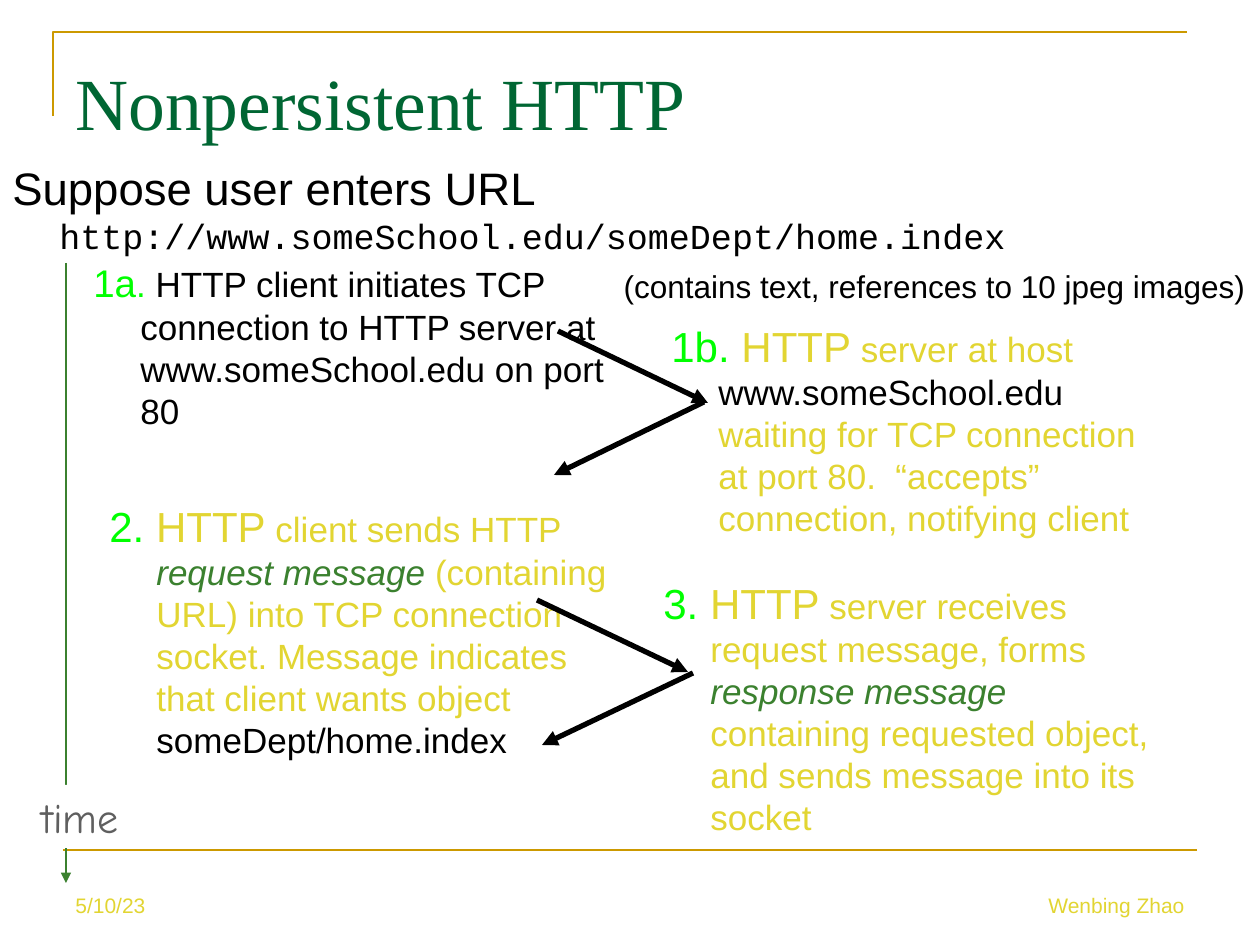
"""Build the slide that steps through a nonpersistent HTTP exchange."""
import pptx
import pptx.dml.color
import pptx.enum.shapes
import pptx.enum.text
import pptx.oxml.ns
import pptx.util
from lxml import etree

RGB = pptx.dml.color.RGBColor
GOLD = RGB(0xCC, 0x99, 0x00)
PINE = RGB(0x00, 0x66, 0x33)
LEAF = RGB(0x3B, 0x81, 0x2F)
LIME = RGB(0x00, 0xFF, 0x00)
SUN = RGB(0xE2, 0xD5, 0x32)
GRAY = RGB(0x5F, 0x5F, 0x5F)
BLACK = RGB(0x00, 0x00, 0x00)
WHITE = RGB(0xFF, 0xFF, 0xFF)

ALIGN = pptx.enum.text.PP_ALIGN
ANCHOR = pptx.enum.text.MSO_ANCHOR
SCALE = 914400 / 126
SIZE = (1260, 945)
HANG = 47

FRAME = [(53, 116), (53, 32), (1187, 32)]
RULE = ((63, 850), (1197, 850))
AXIS = ((66, 263), (66, 883))
ARROWS = [
    ((558, 331), (708, 403)),
    ((537, 600), (688, 672)),
    ((693, 673), (542, 745)),
    ((704, 402), (554, 475)),
]

LABELS = [
    ((63, 861, 294, 63), ("5/10/23", 12, SUN), ALIGN.LEFT, ANCHOR.BOTTOM),
    ((903, 861, 294, 63), ("Wenbing Zhao", 12, SUN), ALIGN.RIGHT, ANCHOR.BOTTOM),
    ((63, 38, 1134, 126), ("Nonpersistent HTTP", 42, PINE, "Times New Roman"),
     ALIGN.LEFT, ANCHOR.MIDDLE),
    ((609, 261, 651, 64),
     ("(contains text, references to 10 jpeg images)", 18, BLACK),
     ALIGN.CENTER, ANCHOR.TOP),
]
TIME = ((24, 785, 112, 63), ("time", 24, GRAY, "Comic Neue"))

STEPS = [
    ((0, 154, 1149, 64), [
        ("Suppose user enters URL ", 26, BLACK),
        ("http://www.someSchool.edu/someDept/home.index", 20, BLACK, "Courier New"),
    ]),
    ((81, 253, 576, 256), [
        ("1a", 22, LIME),
        (".", 20, LIME),
        (" HTTP client initiates TCP connection to HTTP server at "
         "www.someSchool.edu on port 80", 20, BLACK),
    ]),
    ((97, 494, 525, 149), [
        ("2.", 24, LIME),
        (" HTTP", 24, SUN),
        (" client sends HTTP ", 20, SUN),
        ("request message", 20, LEAF, "Arial", True),
        (" (containing URL) into TCP connection socket. "
         "Message indicates that client wants object ", 20, SUN),
        ("someDept/home.index", 20, BLACK),
    ]),
    ((659, 314, 525, 208), [
        ("1b.", 24, LIME),
        (" HTTP", 24, SUN),
        (" server at host ", 20, SUN),
        ("www.someSchool.edu", 20, BLACK),
        (" waiting for TCP connection at port 80.  “accepts” "
         "connection, notifying client", 20, SUN),
    ]),
    ((651, 571, 525, 248), [
        ("3.", 24, LIME),
        (" HTTP", 24, SUN),
        (" server receives request message, forms ", 20, SUN),
        ("response message", 20, LEAF, "Arial", True),
        (" containing requested object, and sends message into its socket", 20, SUN),
    ]),
]


def px(num):
    return pptx.util.Emu(round(num * SCALE))


def sub(node, tag, **attrs):
    return etree.SubElement(node, pptx.oxml.ns.qn(tag), attrs)


def add_run(par, text, size, color, name="Arial", italic=False):
    run = par.add_run()
    run.text = text
    look = {"size": pptx.util.Pt(size), "name": name, "italic": italic}
    for key, value in look.items():
        setattr(run.font, key, value)
    run.font.color.rgb = color


def add_text(shapes, box, runs, align=ALIGN.LEFT, anchor=ANCHOR.TOP):
    frame = shapes.add_textbox(*map(px, box)).text_frame
    look = {"word_wrap": True, "vertical_anchor": anchor}
    for key, value in look.items():
        setattr(frame, key, value)
    par = frame.paragraphs[0]
    par.alignment = align
    for run in runs:
        add_run(par, *run)
    return par


def add_step(shapes, box, runs):
    props = add_text(shapes, box, runs)._p.get_or_add_pPr()
    props.set("marL", str(px(HANG)))
    props.set("indent", str(px(-HANG)))
    sub(sub(props, "a:spcBef"), "a:spcPct", val="20000")


def add_line(shapes, ends, color, width, arrow=True):
    start, end = ends
    kind = pptx.enum.shapes.MSO_CONNECTOR.STRAIGHT
    link = shapes.add_connector(kind, *map(px, start + end))
    link.line.color.rgb = color
    link.line.width = pptx.util.Pt(width)
    if arrow:
        sub(link.line._get_or_add_ln(), "a:tailEnd", type="triangle")
    sub(link._element.spPr, "a:effectLst")


def add_frame(shapes):
    pen = shapes.build_freeform(*FRAME[0], scale=SCALE)
    pen.add_line_segments(FRAME[1:], close=False)
    shape = pen.convert_to_shape()
    shape.shadow.inherit = False
    shape.fill.background()
    shape.line.color.rgb = GOLD
    shape.line.width = pptx.util.Pt(1.5)


def add_time(shapes, box, run):
    kind = pptx.enum.shapes.MSO_SHAPE.RECTANGLE
    shape = shapes.add_shape(kind, *map(px, box))
    shape.shadow.inherit = False
    shape.fill.solid()
    shape.fill.fore_color.rgb = WHITE
    shape.line.fill.background()
    frame = shape.text_frame
    look = {"word_wrap": False, "vertical_anchor": ANCHOR.TOP}
    for key, value in look.items():
        setattr(frame, key, value)
    par = frame.paragraphs[0]
    par.alignment = ALIGN.CENTER
    add_run(par, *run)


def main():
    deck = pptx.Presentation()
    deck.slide_width, deck.slide_height = map(px, SIZE)
    shapes = deck.slides.add_slide(deck.slide_layouts[6]).shapes
    add_frame(shapes)
    add_line(shapes, RULE, GOLD, 1.5, arrow=False)
    add_line(shapes, AXIS, LEAF, 1.5)
    for box, run, align, anchor in LABELS:
        add_text(shapes, box, [run], align, anchor)
    for box, runs in STEPS:
        add_step(shapes, box, runs)
    for ends in ARROWS:
        add_line(shapes, ends, BLACK, 3)
    add_time(shapes, *TIME)
    deck.save("out.pptx")


if __name__ == "__main__":
    main()
